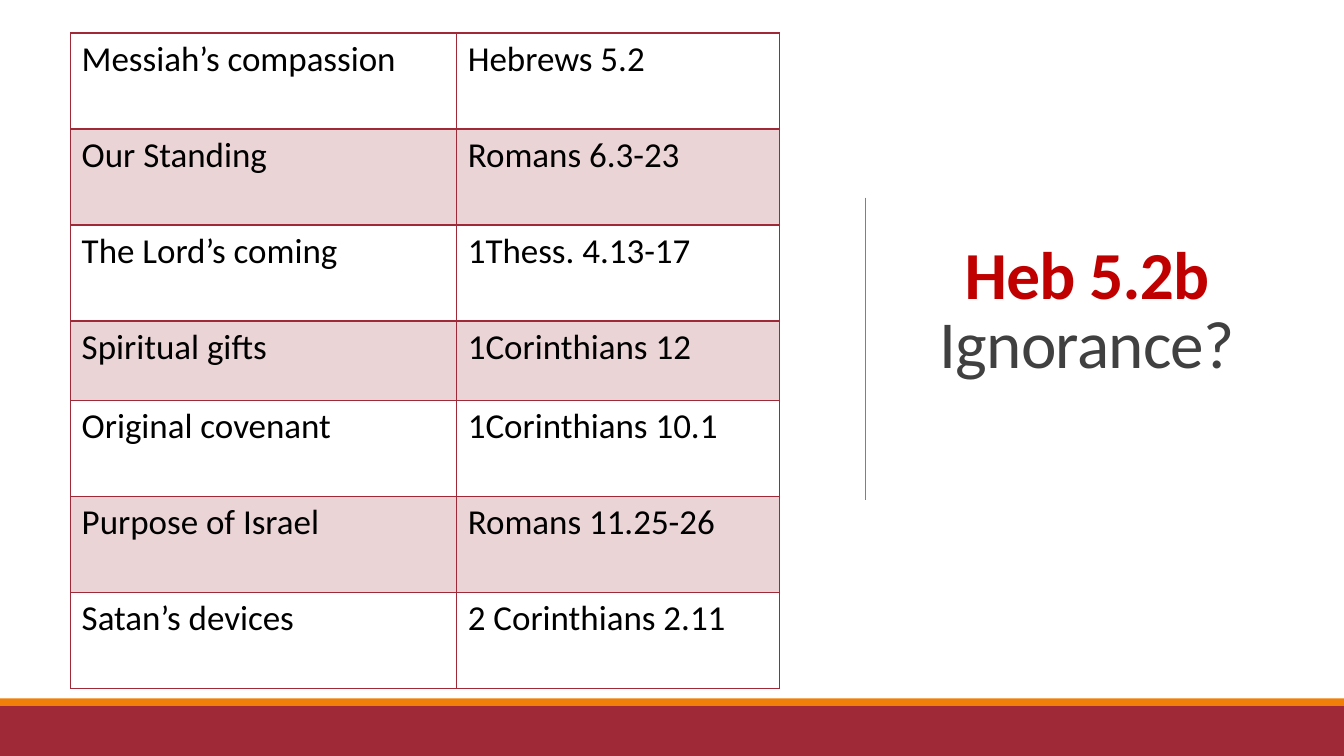
from typing import NamedTuple

from lxml.etree import SubElement
from pptx import Presentation
from pptx.dml.color import RGBColor
from pptx.enum.shapes import MSO_CONNECTOR, MSO_SHAPE
from pptx.enum.text import MSO_ANCHOR, PP_ALIGN
from pptx.oxml.ns import qn
from pptx.slide import Slide
from pptx.table import _Cell
from pptx.util import Cm, Pt

FONT = "Calibri"
CRIMSON = "9F2936"
ORANGE = "F07F09"
SLIDE_WIDTH, SLIDE_HEIGHT = 33.87, 19.05
TALL_ROW, SHORT_ROW = 2.42, 2.0
COLUMN_WIDTHS = (9.73, 8.13)


class Topic(NamedTuple):
    subject: str
    passage: str
    row_height: float = TALL_ROW


class Band(NamedTuple):
    top: float
    height: float
    color: str


class TitleLine(NamedTuple):
    wording: str
    color: str
    bold: bool


TOPICS = (
    Topic("Messiah’s compassion", "Hebrews 5.2"),
    Topic("Our Standing", "Romans 6.3-23"),
    Topic("The Lord’s coming", "1Thess. 4.13-17"),
    Topic("Spiritual gifts", "1Corinthians 12", SHORT_ROW),
    Topic("Original covenant", "1Corinthians 10.1"),
    Topic("Purpose of Israel", "Romans 11.25-26"),
    Topic("Satan’s devices", "2 Corinthians 2.11"),
)
BANDS = (Band(17.6, 0.18, ORANGE), Band(17.78, 1.27, CRIMSON))
TITLE = (
    TitleLine("Heb 5.2b", "C00000", True),
    TitleLine("Ignorance?", "404040", False),
)


def rgb(color: str) -> RGBColor:
    return RGBColor.from_string(color)


def draw_band(slide: Slide, band: Band) -> None:
    bar = slide.shapes.add_shape(
        MSO_SHAPE.RECTANGLE, 0, Cm(band.top), Cm(SLIDE_WIDTH), Cm(band.height)
    )
    bar.shadow.inherit = False
    bar.fill.solid()
    bar.fill.fore_color.rgb = rgb(band.color)
    bar.line.fill.background()


def draw_title(slide: Slide) -> None:
    title = slide.shapes.add_textbox(Cm(22.71), Cm(1.75), Cm(9.37), Cm(12.29))
    frame = title.text_frame
    frame.word_wrap = True
    frame.vertical_anchor = MSO_ANCHOR.MIDDLE
    frame.text = "\n".join(line.wording for line in TITLE)
    for paragraph, line in zip(frame.paragraphs, TITLE):
        paragraph.alignment = PP_ALIGN.CENTER
        paragraph.line_spacing = 0.85
        paragraph.font.name = FONT
        paragraph.font.size = Pt(48)
        paragraph.font.bold = line.bold
        paragraph.font.color.rgb = rgb(line.color)
        for run in paragraph.runs:
            run._r.get_or_add_rPr().set("spc", "-50")


def draw_divider(slide: Slide) -> None:
    divider = slide.shapes.add_connector(
        MSO_CONNECTOR.STRAIGHT, Cm(21.82), Cm(4.98), Cm(21.82), Cm(12.6)
    )
    divider.line.color.rgb = rgb("808080")
    divider.line.width = Pt(0.5)
    SubElement(divider._element.spPr, qn("a:effectLst"))


def add_borders(cell: _Cell) -> None:
    """Outline all four sides; must run before the cell gets its fill."""
    properties = cell._tc.get_or_add_tcPr()
    for side in ("lnL", "lnR", "lnT", "lnB"):
        border = SubElement(properties, qn(f"a:{side}"), w=str(Pt(1)))
        fill = SubElement(border, qn("a:solidFill"))
        SubElement(fill, qn("a:srgbClr"), val=CRIMSON)


def fill_cell(cell: _Cell, tinted: bool) -> None:
    if not tinted:
        cell.fill.background()
        return
    cell.fill.solid()
    cell.fill.fore_color.rgb = rgb(CRIMSON)
    tint = cell._tc.tcPr.find(qn("a:solidFill")).find(qn("a:srgbClr"))
    SubElement(tint, qn("a:alpha"), val="20000")


def draw_topics(slide: Slide) -> None:
    table = slide.shapes.add_table(
        len(TOPICS), len(COLUMN_WIDTHS), Cm(1.78), Cm(0.83),
        Cm(sum(COLUMN_WIDTHS)), Cm(sum(topic.row_height for topic in TOPICS)),
    ).table
    table.first_row = False
    table.horz_banding = False
    for column, width in zip(table.columns, COLUMN_WIDTHS):
        column.width = Cm(width)
    for index, (row, topic) in enumerate(zip(table.rows, TOPICS)):
        row.height = Cm(topic.row_height)
        for cell, wording in zip(row.cells, (topic.subject, topic.passage)):
            cell.text = wording
            cell.margin_left = cell.margin_right = Cm(0.28)
            cell.margin_top = cell.margin_bottom = Cm(0.13)
            font = cell.text_frame.paragraphs[0].font
            font.name = FONT
            font.size = Pt(25)
            font.color.rgb = rgb("000000")
            add_borders(cell)
            fill_cell(cell, tinted=index % 2 == 1)


def main() -> None:
    presentation = Presentation()
    presentation.slide_width = Cm(SLIDE_WIDTH)
    presentation.slide_height = Cm(SLIDE_HEIGHT)
    slide = presentation.slides.add_slide(presentation.slide_layouts[6])
    draw_title(slide)
    draw_divider(slide)
    for band in BANDS:
        draw_band(slide, band)
    draw_topics(slide)
    presentation.save("out.pptx")


if __name__ == "__main__":
    main()
